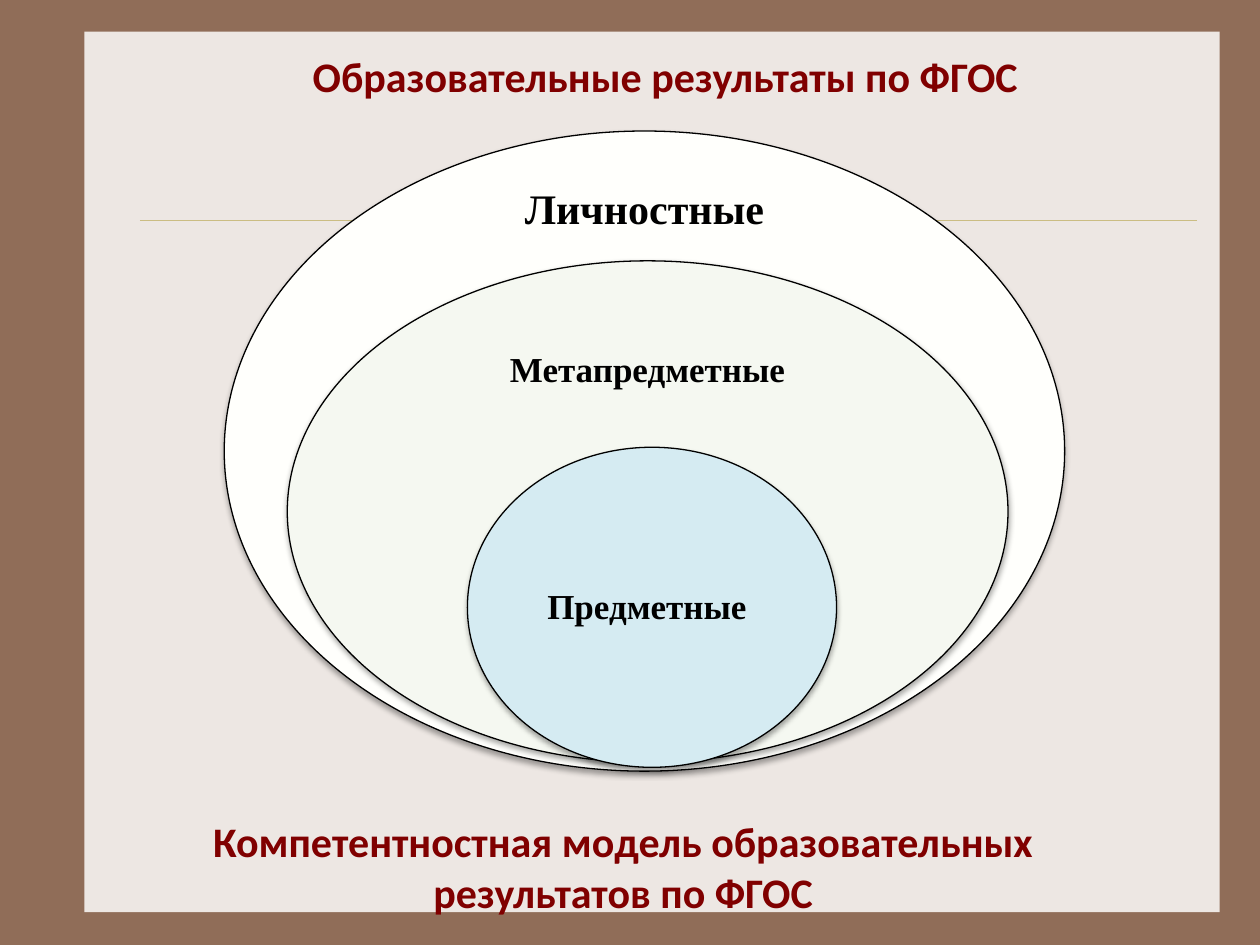
import pptx
import pptx.util
import pptx.dml.color
import pptx.enum.shapes
import pptx.enum.text
import pptx.oxml
import pptx.oxml.ns

W, H = 10, 7.5
COLORS = {
    "frame": "906D58", "panel": "EDE7E3", "rule": "CBBD83", "black": "000000",
    "heading": "800000", "personal": "FFFFFC", "meta": "F5F8F1", "subject": "D5EBF2",
}
NS = pptx.oxml.ns.nsdecls("a")
SHADOW = (f'<a:effectLst {NS}><a:outerShdw blurRad="39370" dist="22860" dir="5400000" '
          'rotWithShape="0"><a:srgbClr val="000000"><a:alpha val="35000"/></a:srgbClr>'
          '</a:outerShdw></a:effectLst>')

# Nested rings: colour, ellipse box, label, label box, label size
RINGS = [
    ("personal", (1.78, 1.04, 6.67, 5.08), "Личностные", (3.95, 1.29, 2.33, 0.76), 24),
    ("meta", (2.28, 2.07, 5.72, 3.98), "Метапредметные", (3.81, 2.57, 2.66, 0.75), 20),
    ("subject", (3.71, 3.55, 2.93, 2.54), "Предметные", (4.1, 4.19, 2.07, 1.27), 20),
]


def rgb(name):
    return pptx.dml.color.RGBColor.from_string(COLORS[name])


def inches(box):
    return [pptx.util.Inches(v) for v in box]


def write(s, text, font, size, color, spacing=1.0):
    """Centre bold text in a shape without margins."""
    tf = s.text_frame
    tf.text = text
    tf.word_wrap = True
    tf.auto_size = pptx.enum.text.MSO_AUTO_SIZE.NONE
    tf.vertical_anchor = pptx.enum.text.MSO_ANCHOR.MIDDLE
    tf.margin_left = tf.margin_right = tf.margin_top = tf.margin_bottom = 0
    for p in tf.paragraphs:
        p.alignment = pptx.enum.text.PP_ALIGN.CENTER
        p.line_spacing = spacing
        p.space_before = pptx.util.Pt(0)
        for r in p.runs:
            r.font.name, r.font.bold = font, True
            r.font.size = pptx.util.Pt(size)
            r.font.color.rgb = rgb(color)


def add_backdrop(slide):
    fill = slide.background.fill
    fill.solid()
    fill.fore_color.rgb = rgb("frame")
    panel = slide.shapes.add_shape(pptx.enum.shapes.MSO_SHAPE.RECTANGLE,
                                   *inches((0.67, 0.25, 9.01, 6.99)))
    panel.shadow.inherit = False
    panel.fill.solid()
    panel.fill.fore_color.rgb = rgb("panel")
    panel.line.fill.background()
    rule = slide.shapes.add_connector(pptx.enum.shapes.MSO_CONNECTOR.STRAIGHT,
                                      *inches((1.11, 1.75, 9.5, 1.75)))
    rule.line.color.rgb = rgb("rule")
    rule.line.width = pptx.util.Pt(0.25)
    rule._element.spPr.append(pptx.oxml.parse_xml(f"<a:effectLst {NS}/>"))


def add_ring(slide, color, box):
    s = slide.shapes.add_shape(pptx.enum.shapes.MSO_SHAPE.OVAL, *inches(box))
    s.fill.solid()
    s.fill.fore_color.rgb = rgb(color)
    s.line.color.rgb = rgb("black")
    s.line.width = pptx.util.Pt(0.75)
    s._element.spPr.append(pptx.oxml.parse_xml(SHADOW))


def add_label(slide, box, text, font, size, color, spacing=1.0):
    s = slide.shapes.add_textbox(*inches(box))
    write(s, text, font, size, color, spacing)


def place_title(slide, box, text):
    s = slide.shapes.title
    s.left, s.top, s.width, s.height = inches(box)
    write(s, text, "Calibri", 24, "heading")
    # Bring the title in front of the panel
    slide.shapes._spTree.append(s._element)


def main():
    prs = pptx.Presentation()
    prs.slide_width, prs.slide_height = inches((W, H))
    slide = prs.slides.add_slide(prs.slide_layouts[5])
    add_backdrop(slide)

    # Rings from the outermost inwards
    for color, ring_box, text, label_box, size in RINGS:
        add_ring(slide, color, ring_box)
        add_label(slide, label_box, text, "Times New Roman", size, "black", 0.9)

    # Heading and caption
    place_title(slide, (2.35, 0.35, 5.86, 0.5), "Образовательные результаты по ФГОС")
    add_label(slide, (1.52, 6.42, 6.85, 0.91),
              "Компетентностная модель образовательных\nрезультатов по ФГОС",
              "Calibri", 24, "heading")
    prs.save("out.pptx")


if __name__ == "__main__":
    main()
